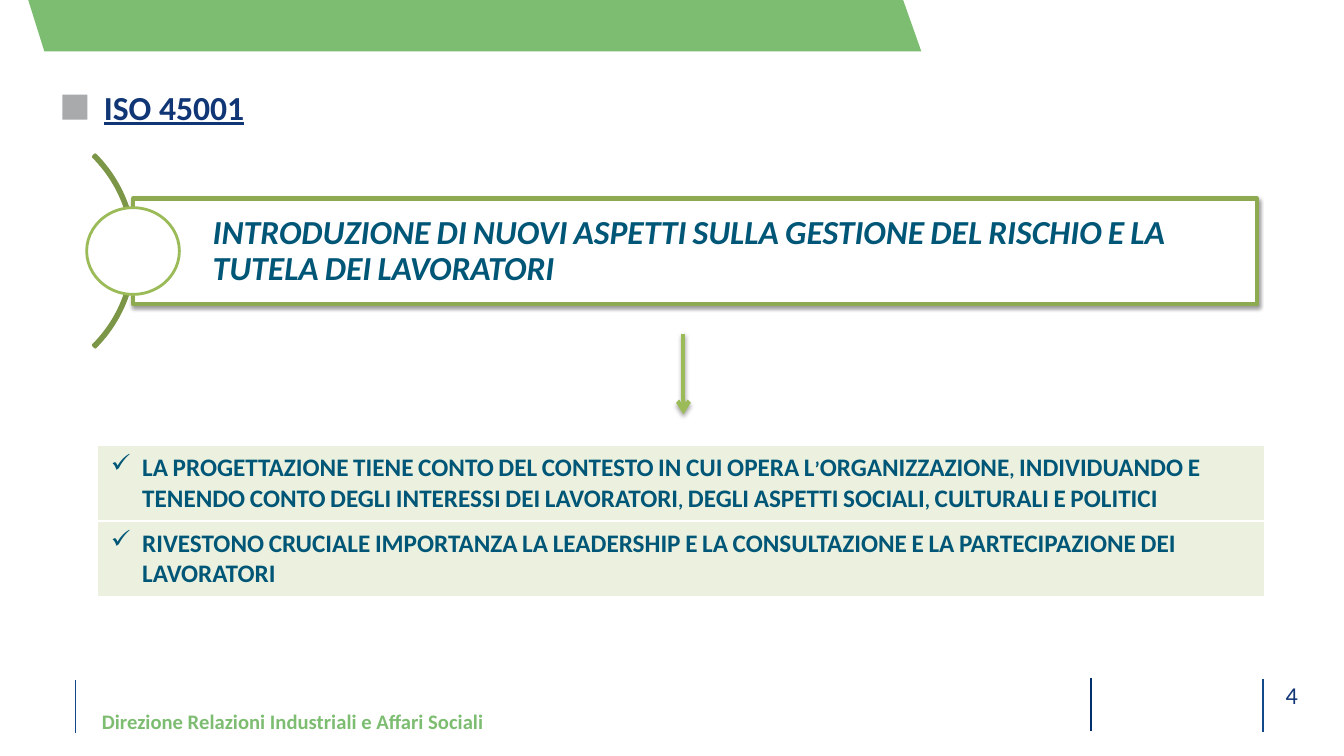
from lxml import etree
from pptx import Presentation
from pptx import util as u
from pptx.dml.color import RGBColor
from pptx.enum import shapes, text
from pptx.oxml import ns

COLOURS = {
    "navy": "103676", "rule": "11498A", "deep": "002E6E", "grey": "939598",
    "green": "7DBD71", "arc": "7C9647", "frame": "8DAA51", "lime": "9BBB59",
    "teal": "005677", "pale": "EBF1DE", "white": "FFFFFF", "black": "000000",
}
WIDTH, HEIGHT = u.Inches(13.33), u.Inches(7.5)
POINTS = [
    "LA PROGETTAZIONE TIENE CONTO DEL CONTESTO IN CUI OPERA L’ORGANIZZAZIONE, "
    "INDIVIDUANDO E TENENDO CONTO DEGLI INTERESSI DEI LAVORATORI, "
    "DEGLI ASPETTI SOCIALI, CULTURALI E POLITICI",
    "RIVESTONO CRUCIALE IMPORTANZA LA LEADERSHIP E LA CONSULTAZIONE "
    "E LA PARTECIPAZIONE DEI LAVORATORI",
]


def across(share):
    return int(WIDTH * share / 100)


def down(share):
    return int(HEIGHT * share / 100)


def area(left, top, width, height):
    return across(left), down(top), across(width), down(height)


def colour(name):
    return RGBColor.from_string(COLOURS[name])


def child(parent, tag, **attributes):
    return etree.SubElement(parent, ns.qn(tag), attributes)


def paint(shape, fill=None, line=None, weight=0):
    shape.shadow.inherit = False
    if fill:
        shape.fill.solid()
        shape.fill.fore_color.rgb = colour(fill)
    else:
        shape.fill.background()
    if line:
        shape.line.color.rgb = colour(line)
        shape.line.width = u.Pt(weight)
    else:
        shape.line.fill.background()


def cast_shadow(effects, distance, opacity):
    shadow = child(effects, "a:outerShdw", blurRad=str(u.Pt(3.1)),
                   dist=str(u.Pt(distance)), dir="5400000", rotWithShape="0")
    black = child(shadow, "a:srgbClr", val=COLOURS["black"])
    child(black, "a:alpha", val=str(opacity * 1000))


def write(frame, wording, size, name, bold=False, italic=False, underline=False,
          small_caps=False):
    frame.text = wording
    para = frame.paragraphs[0]
    for span in para.runs:
        font = span.font
        font.name, font.size, font.color.rgb = "Calibri", u.Pt(size), colour(name)
        font.bold, font.italic, font.underline = bold, italic, underline
        if small_caps:
            font._element.set("cap", "small")
    return para


def set_frame(frame, anchor, insets=(0, 0, 0, 0)):
    frame.word_wrap = True
    frame.auto_size = text.MSO_AUTO_SIZE.NONE
    frame.vertical_anchor = anchor
    (frame.margin_left, frame.margin_top,
     frame.margin_right, frame.margin_bottom) = map(u.Inches, insets)


def place(box, bounds, anchor):
    box.left, box.top, box.width, box.height = area(*bounds)
    set_frame(box.text_frame, anchor)


def add_preset(page, kind, bounds, **style):
    shape = page.shapes.add_shape(kind, *area(*bounds))
    paint(shape, **style)
    return shape


def add_line(page, start, end, name, weight):
    line = page.shapes.add_connector(
        shapes.MSO_CONNECTOR.STRAIGHT,
        across(start[0]), down(start[1]), across(end[0]), down(end[1]))
    line.line.color.rgb = colour(name)
    line.line.width = u.Pt(weight)
    return line, child(line._element.spPr, "a:effectLst")


def add_banner(page):
    corners = [(2.1, 0), (3.3, 6.8), (68.55, 6.8), (67.2, 0)]
    first, *others = [(across(x), down(y)) for x, y in corners]
    builder = page.shapes.build_freeform(*first)
    builder.add_line_segments(others, close=True)
    paint(builder.convert_to_shape(), fill="green")


def add_heading(page):
    title = page.shapes.title
    place(title, (7.73, 11.47, 84.6, 6.27), text.MSO_ANCHOR.TOP)
    para = write(title.text_frame, "ISO 45001", 24, "navy", bold=True, underline=True)
    para.alignment = text.PP_ALIGN.LEFT
    marker = add_preset(page, shapes.MSO_SHAPE.RECTANGLE,
                        (4.65, 12.53, 1.85, 3.3), fill="grey")
    tint = marker.fill._xPr.find(".//" + ns.qn("a:srgbClr"))
    child(tint, "a:alpha", val="80000")


def add_statement(page):
    kinds = shapes.MSO_SHAPE
    arc = add_preset(page, kinds.BLOCK_ARC, (-10.2, 15.2, 20.25, 36),
                     line="arc", weight=2)
    for index, value in enumerate((189, 27, 0.01)):
        arc.adjustments[index] = value
    band = add_preset(page, kinds.RECTANGLE, (9.9, 26.27, 83.63, 14),
                      fill="white", line="frame", weight=3)
    cast_shadow(band._element.spPr.find(ns.qn("a:effectLst")), 1.6, 38)
    set_frame(band.text_frame, text.MSO_ANCHOR.MIDDLE, (0.79, 0.07, 0.07, 0.07))
    para = write(band.text_frame,
                 "INTRODUZIONE DI NUOVI ASPETTI SULLA GESTIONE DEL RISCHIO "
                 "E LA TUTELA DEI LAVORATORI",
                 24, "teal", bold=True, italic=True, small_caps=True)
    para.alignment = text.PP_ALIGN.LEFT
    para.line_spacing = 0.9
    add_preset(page, kinds.OVAL, (6.45, 27.47, 6.9, 11.47),
               fill="white", line="lime", weight=2)


def add_arrow(page):
    arrow, effects = add_line(page, (50.85, 44.13), (50.85, 54.8), "lime", 3)
    child(arrow.line._get_or_add_ln(), "a:tailEnd", type="arrow")
    cast_shadow(effects, 1.8, 35)


def add_points(page):
    table = page.shapes.add_table(
        len(POINTS), 1, *area(7.28, 58.93, 86.78, 19.6)).table
    table.horz_banding = False
    for row, wording in enumerate(POINTS):
        cell = table.cell(row, 0)
        cell.fill.solid()
        cell.fill.fore_color.rgb = colour("pale")
        cell.margin_left = cell.margin_right = u.Inches(0.13)
        cell.margin_top = cell.margin_bottom = u.Inches(0.07)
        para = write(cell.text_frame, wording, 18, "teal", bold=True, small_caps=True)
        layout = para._p.get_or_add_pPr()
        indent = u.Inches(0.31)
        layout.set("marL", str(indent))
        layout.set("indent", str(-indent))
        child(layout, "a:buChar", char="✓")


def add_footer(page):
    body = page.placeholders[1]
    place(body, (7.58, 90, 44.1, 7.07), text.MSO_ANCHOR.BOTTOM)
    para = write(body.text_frame, "Direzione Relazioni Industriali e Affari Sociali",
                 14.7, "green", bold=True)
    para.space_before = u.Pt(1.3)
    layout = para._p.get_or_add_pPr()
    layout.set("marL", "0")
    layout.set("indent", "0")
    child(layout, "a:buNone")
    for x, top, name, weight in ((5.63, 90, "rule", 1), (81.19, 89.73, "deep", 1.5),
                                 (93.98, 89.87, "rule", 1)):
        add_line(page, (x, top), (x, top + 6.93), name, weight)
    number = page.shapes.add_textbox(*area(94.2, 90, 3.83, 4.13))
    set_frame(number.text_frame, text.MSO_ANCHOR.TOP)
    para = write(number.text_frame, "4", 17.3, "navy")
    para.alignment = text.PP_ALIGN.CENTER


def main():
    deck = Presentation()
    deck.slide_width, deck.slide_height = WIDTH, HEIGHT
    page = deck.slides.add_slide(deck.slide_layouts[1])
    add_banner(page)
    add_heading(page)
    add_statement(page)
    add_arrow(page)
    add_points(page)
    add_footer(page)
    deck.save("out.pptx")


if __name__ == "__main__":
    main()
